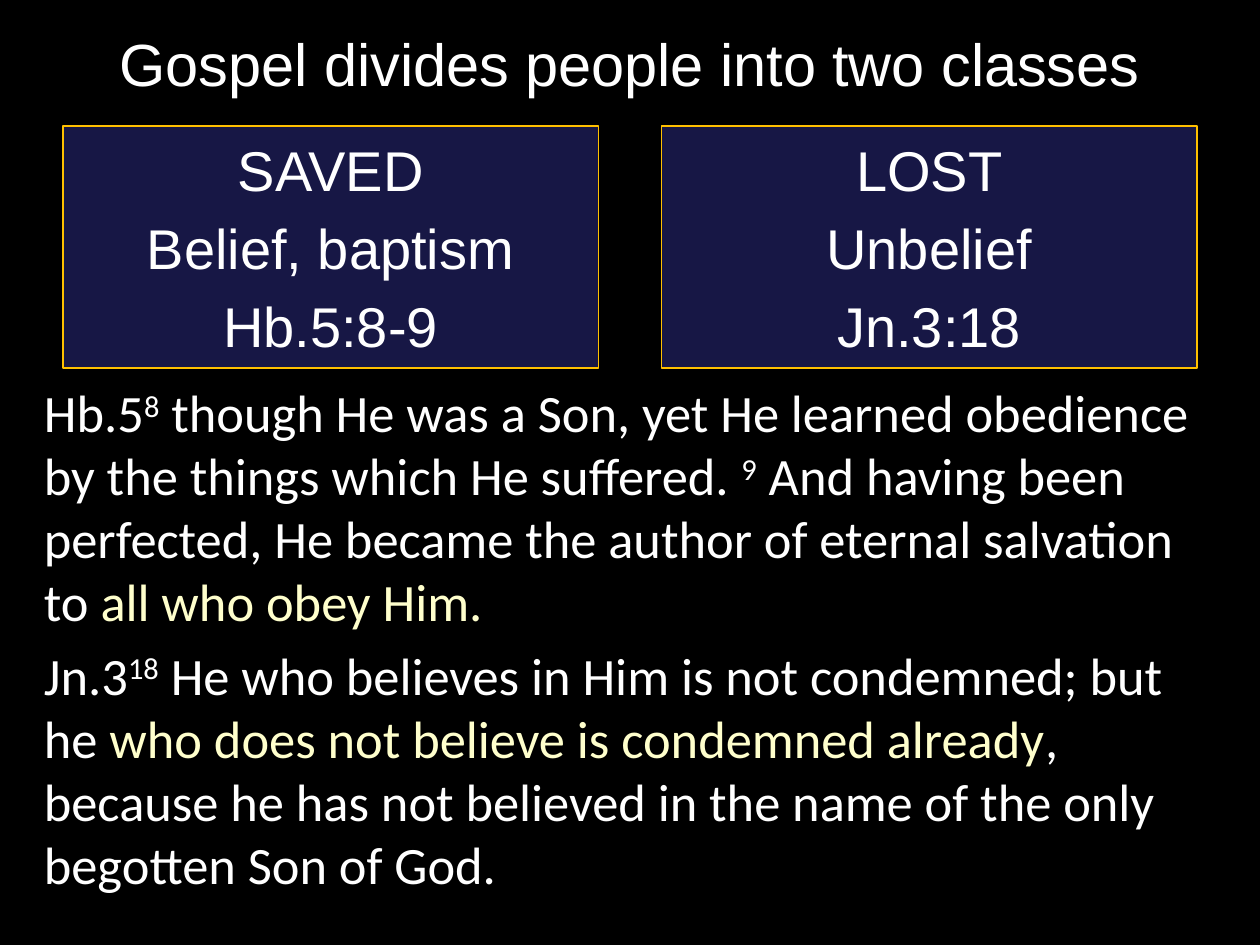
from dataclasses import dataclass

import pptx
import pptx.dml.color
import pptx.enum.shapes
import pptx.enum.text
import pptx.util
from pptx.util import Inches

ALIGN = pptx.enum.text.PP_ALIGN
ANCHOR = pptx.enum.text.MSO_ANCHOR


@dataclass(frozen=True)
class Theme:
    background: str = "000000"
    text: str = "FFFFFF"
    highlight: str = "FFFFCC"
    panel: str = "171745"
    border: str = "FFC000"
    heading_font: str = "Arial"
    verse_font: str = "Calibri"
    title_size: int = 34
    panel_size: int = 32
    verse_size: int = 30


THEME = Theme()


def rgb(value):
    return pptx.dml.color.RGBColor.from_string(value)


def style_font(font, name, size, color=THEME.text):
    font.name = name
    font.size = pptx.util.Pt(size)
    font.color.rgb = rgb(color)


def add_title(slide, box, text):
    text_frame = slide.shapes.add_textbox(*box).text_frame
    text_frame.word_wrap = True
    text_frame.vertical_anchor = ANCHOR.MIDDLE
    text_frame.text = text
    paragraph = text_frame.paragraphs[0]
    paragraph.alignment = ALIGN.CENTER
    style_font(paragraph.runs[0].font, THEME.heading_font, THEME.title_size)


def add_panel(slide, box, lines, spaces_after):
    shape = slide.shapes.add_shape(pptx.enum.shapes.MSO_SHAPE.RECTANGLE, *box)
    shape.shadow.inherit = False
    shape.fill.solid()
    shape.fill.fore_color.rgb = rgb(THEME.panel)
    shape.line.color.rgb = rgb(THEME.border)
    shape.line.width = pptx.util.Pt(1)
    text_frame = shape.text_frame
    text_frame.vertical_anchor = ANCHOR.MIDDLE
    text_frame.text = "\n".join(lines)
    for paragraph, space in zip(text_frame.paragraphs, spaces_after):
        paragraph.alignment = ALIGN.CENTER
        paragraph.space_after = pptx.util.Pt(space)
        style_font(paragraph.runs[0].font, THEME.heading_font, THEME.panel_size)


def add_panels(slide, box, panels, gap):
    left, top, width, height = box
    panel_width = (width - gap * (len(panels) - 1)) // len(panels)
    for index, (lines, spaces_after) in enumerate(panels):
        panel_left = left + index * (panel_width + gap)
        add_panel(slide, (panel_left, top, panel_width, height), lines, spaces_after)


def add_verses(slide, box, verses):
    text_frame = slide.shapes.add_textbox(*box).text_frame
    text_frame.word_wrap = True
    for index, verse in enumerate(verses):
        paragraph = text_frame.paragraphs[0]
        if index:
            paragraph = text_frame.add_paragraph()
            paragraph.space_before = pptx.util.Pt(6)
        for text, kind in verse:
            run = paragraph.add_run()
            run.text = text
            color = THEME.highlight if kind == "highlight" else THEME.text
            style_font(run.font, THEME.verse_font, THEME.verse_size, color)
            if kind == "number":
                run.font._element.set("baseline", "30000")


PANELS = [
    (["SAVED", "Belief, baptism", "Hb.5:8-9"], [6, 6, 3]),
    (["LOST", "Unbelief", "Jn.3:18"], [6, 6, 0]),
]

VERSES = [
    [
        ("Hb.5", "plain"),
        ("8", "number"),
        (" though He was a Son, yet He learned obedience by the things "
         "which He suffered. ", "plain"),
        ("9", "number"),
        (" And having been perfected, He became the author of eternal "
         "salvation to ", "plain"),
        ("all who obey Him.", "highlight"),
    ],
    [
        ("Jn.3", "plain"),
        ("18", "number"),
        (" He who believes in Him is not condemned; but he ", "plain"),
        ("who does not believe is condemned already", "highlight"),
        (", because he has not believed in the name of the only begotten "
         "Son of God.", "plain"),
    ],
]


def main():
    presentation = pptx.Presentation()
    presentation.slide_width = Inches(10)
    presentation.slide_height = Inches(7.5)
    slide = presentation.slides.add_slide(presentation.slide_layouts[6])
    slide.background.fill.solid()
    slide.background.fill.fore_color.rgb = rgb(THEME.background)

    # Title
    add_title(slide, (Inches(0.5), Inches(0.08), Inches(9), Inches(0.83)),
              "Gospel divides people into two classes")
    # Verses below the panels
    add_verses(slide, (Inches(0.25), Inches(2.97), Inches(9.5), Inches(4.03)), VERSES)
    # Two classes side by side
    add_panels(slide, (Inches(0.5), Inches(1), Inches(9), Inches(1.92)),
               PANELS, gap=Inches(0.5))

    presentation.save("out.pptx")


if __name__ == "__main__":
    main()
